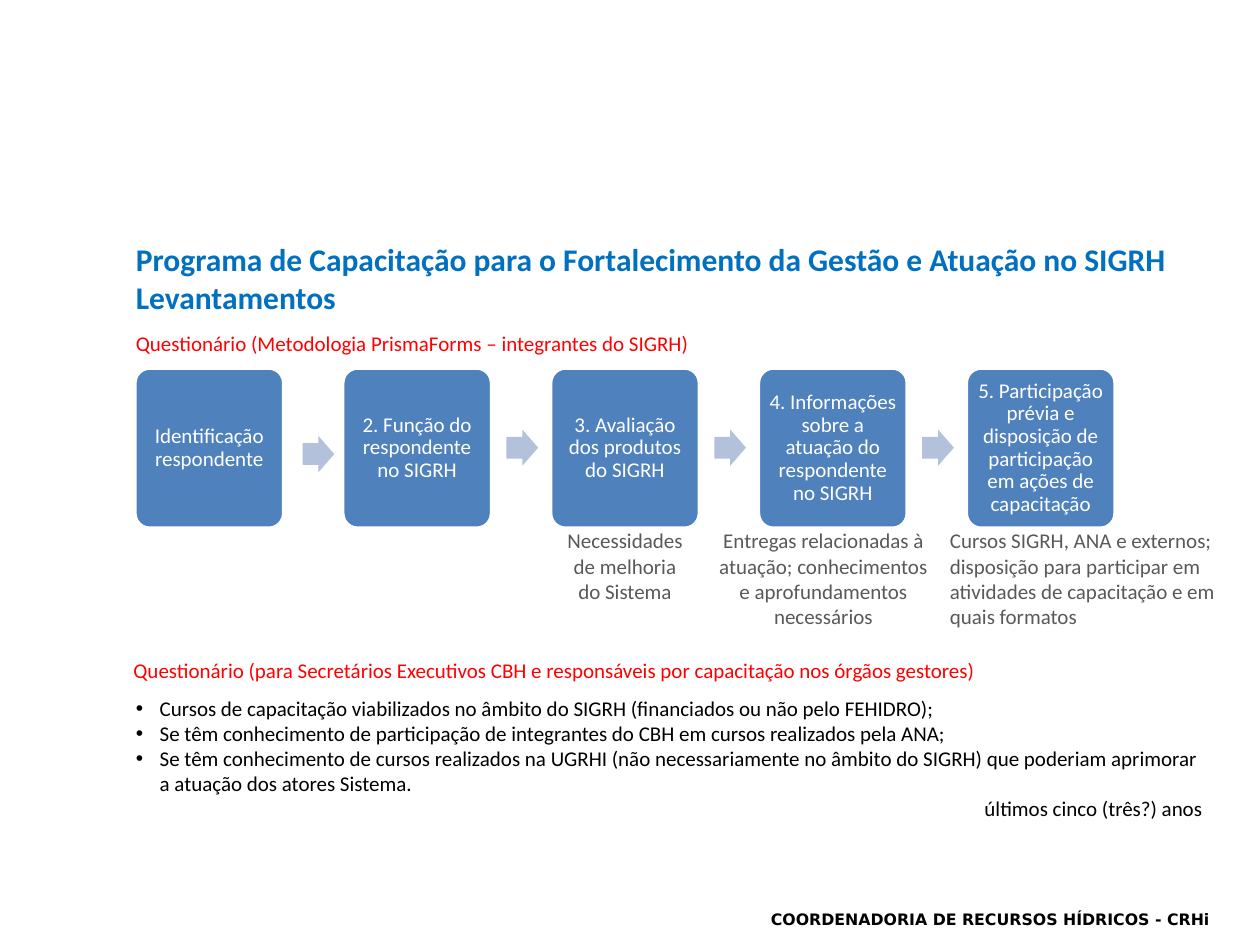
from pptx import Presentation
from pptx.dml.color import RGBColor
from pptx.enum.shapes import MSO_SHAPE
from pptx.enum.text import MSO_ANCHOR, PP_ALIGN
from pptx.oxml.ns import qn
from pptx.util import Cm, Pt
from lxml import etree

ROUND, ARROW = MSO_SHAPE.ROUNDED_RECTANGLE, MSO_SHAPE.RIGHT_ARROW
LEFT, MID, RIGHT, FULL = PP_ALIGN.LEFT, PP_ALIGN.CENTER, PP_ALIGN.RIGHT, PP_ALIGN.JUSTIFY
CENTER = MSO_ANCHOR.MIDDLE
BLUE, PALE, WHITE, BLACK = "4F81BD", "B3C1DB", "FFFFFF", "000000"
TITLE, RED, GRAY = "0070C0", "FF0000", "595959"
STEP = 4.19


def paint(target, color):
    target.rgb = RGBColor.from_string(color)


def assign(target, values):
    for name, value in values.items():
        setattr(target, name, value)


class Deck:
    """Hold the text style and the current slide, and draw elements on it."""

    def __init__(self, slide):
        self.slide = slide
        self.font = {"name": "Calibri", "size": Pt(12), "bold": False}

    def fill_para(self, para, text, color, align, **style):
        para.text = text
        para.alignment = align
        assign(para.font, {**self.font, **style})
        paint(para.font.color, color)

    def text(self, place, lines, color, align=LEFT, **style):
        frame = self.slide.shapes.add_textbox(*map(Cm, place)).text_frame
        frame.word_wrap = True
        for i, line in enumerate(lines):
            para = frame.add_paragraph() if i else frame.paragraphs[0]
            self.fill_para(para, line, color, align, **style)
        return frame

    def bullet(self, para):
        props = para._p.get_or_add_pPr()
        props.set("marL", str(Cm(0.48)))
        props.set("indent", str(-Cm(0.48)))
        font = etree.Element(qn("a:buFont"), typeface="Arial")
        mark = etree.Element(qn("a:buChar"), char="•")
        for pos, item in enumerate((font, mark)):
            props.insert(pos, item)

    def shape(self, kind, place, fill, ratios):
        shape = self.slide.shapes.add_shape(kind, *map(Cm, place))
        shape.shadow.inherit = False
        shape.fill.solid()
        paint(shape.fill.fore_color, fill)
        for i, ratio in enumerate(ratios):
            shape.adjustments[i] = ratio
        return shape

    def arrow(self, left, top):
        shape = self.shape(ARROW, (left, top, 0.64, 0.73), PALE, (0.6, 0.5))
        shape.line.fill.background()

    def box(self, left, text):
        shape = self.shape(ROUND, (left, 7.42, 3, 3.23), BLUE, (0.1,))
        paint(shape.line.color, WHITE)
        shape.line.width = Pt(2)
        frame = shape.text_frame
        assign(frame, {"word_wrap": True, "vertical_anchor": CENTER})
        sides = ("left", "right", "top", "bottom")
        assign(frame, {f"margin_{side}": Cm(0.12) for side in sides})
        para = frame.paragraphs[0]
        self.fill_para(para, text, WHITE, MID)
        para.line_spacing = 0.9


def main():
    show = Presentation()
    assign(show, {"slide_width": Cm(25.4), "slide_height": Cm(19.05)})
    deck = Deck(show.slides.add_slide(show.slide_layouts[6]))

    deck.text((15.29, 18.21, 10.11, 0.64), ["COORDENADORIA DE RECURSOS HÍDRICOS - CRHi"],
              BLACK, name="DejaVu Sans", size=Pt(9), bold=True)
    deck.text((2.49, 4.72, 22.2, 1.8),
              ["Programa de Capacitação para o Fortalecimento da Gestão e Atuação no SIGRH",
               "Levantamentos"], TITLE, FULL, size=Pt(18), bold=True)

    stages = ["Identificação respondente",
              "2. Função do respondente no SIGRH",
              "3. Avaliação dos produtos do SIGRH",
              "4. Informações sobre a atuação do respondente no SIGRH",
              "5. Participação prévia e disposição de participação em ações de capacitação"]
    for i, stage in enumerate(stages):
        deck.box(2.72 + i * STEP, stage)
    deck.arrow(6.1, 8.79)
    for i in range(1, 4):
        deck.arrow(6.02 + i * STEP, 8.66)

    deck.text((2.49, 6.53, 14.1, 1.27),
              ["Questionário (Metodologia PrismaForms – integrantes do SIGRH)"], RED)
    notes = [
        (11.1, 3, MID, ["Necessidades de melhoria do Sistema"]),
        (14.1, 5, MID, ["Entregas relacionadas à atuação; conhecimentos e aprofundamentos necessários"]),
        (18.9, 6.2, LEFT, ["Cursos SIGRH, ANA e externos;",
                           "disposição para participar em atividades de capacitação e em quais formatos"]),
    ]
    for left, width, align, lines in notes:
        deck.text((left, 10.52, width, 2.31), lines, GRAY, align)

    deck.text((2.44, 13.13, 19.25, 0.76),
              ["Questionário (para Secretários Executivos CBH e responsáveis por "
               "capacitação nos órgãos gestores)"], RED)
    frame = deck.text((2.49, 13.89, 22, 2.82), [
        "Cursos de capacitação viabilizados no âmbito do SIGRH (financiados ou não pelo FEHIDRO);",
        "Se têm conhecimento de participação de integrantes do CBH em cursos realizados pela ANA;",
        "Se têm conhecimento de cursos realizados na UGRHI (não necessariamente no âmbito "
        "do SIGRH) que poderiam aprimorar a atuação dos atores Sistema.",
        "últimos cinco (três?) anos"], BLACK)
    *points, last = frame.paragraphs
    for para in points:
        deck.bullet(para)
    last.alignment = RIGHT
    show.save("out.pptx")


if __name__ == "__main__":
    main()
